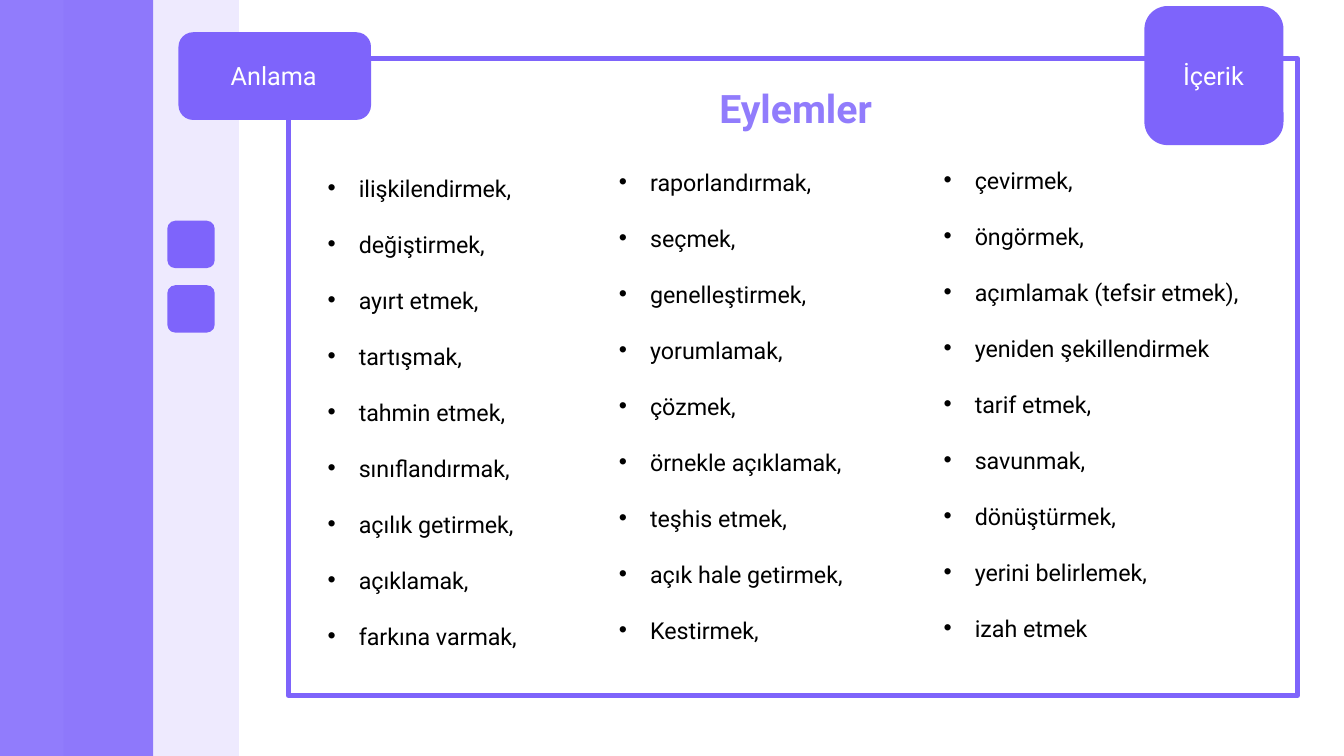
import pptx
import pptx.util
import pptx.dml.color
import pptx.enum.shapes
import pptx.enum.text
import pptx.oxml.ns
from lxml import etree

Inches, Pt = pptx.util.Inches, pptx.util.Pt
SHAPE = pptx.enum.shapes.MSO_SHAPE
ALIGN = pptx.enum.text.PP_ALIGN
qn = pptx.oxml.ns.qn

COLORS = {"violet": "7E64FB", "lilac": "917CFC", "white": "FFFFFF", "black": "000000"}
FONT = "Roboto"
INDENT = 0.31

TITLE = ("Eylemler", (3.83, 0.84, 8.12, 0.92))
BADGES = [
    ("İçerik", (11.35, 0.06, 1.38, 1.38), 11.04),
    ("Anlama", (1.77, 0.32, 1.91, 0.87), 1.72),
]
VERB_COLUMNS = [
    ((3.15, 1.76, 2.89, 4.86), [
        "ilişkilendirmek,", "değiştirmek,", "ayırt etmek,", "tartışmak,", "tahmin etmek,",
        "sınıflandırmak,", "açılık getirmek,", "açıklamak,", "farkına varmak,"]),
    ((6.04, 1.7, 3.53, 4.86), [
        "raporlandırmak,", "seçmek,", "genelleştirmek,", "yorumlamak,", "çözmek,",
        "örnekle açıklamak,", "teşhis etmek,", "açık hale getirmek,", "Kestirmek,"]),
    ((9.26, 1.68, 3.36, 4.99), [
        "çevirmek,", "öngörmek,", "açımlamak (tefsir etmek),", "yeniden şekillendirmek",
        "tarif etmek,", "savunmak,", "dönüştürmek,", "yerini belirlemek,", "izah etmek"]),
]
SIDE_BUTTON_TOPS = [2.19, 2.83]


def rgb(name):
    return pptx.dml.color.RGBColor.from_string(COLORS[name])


def add_block(s, kind, box, color, alpha=None, border=None):
    sp = s.shapes.add_shape(kind, *map(Inches, box))
    sp.shadow.inherit = False
    sp.fill.solid()
    sp.fill.fore_color.rgb = rgb(color)
    if alpha is not None:
        clr = sp._element.spPr.find(qn("a:solidFill"))[0]
        etree.SubElement(clr, qn("a:alpha")).set("val", str(alpha * 1000))
    if border:
        sp.line.color.rgb = rgb(border)
        sp.line.width = Pt(3.5)
    else:
        sp.line.fill.background()


def add_text(s, box, lines, size, color, bold=False, spacing=0.9, bullets=False):
    tf = s.shapes.add_textbox(*map(Inches, box)).text_frame
    tf.word_wrap = True
    tf.text = "\n".join(lines)
    for p in tf.paragraphs:
        p.alignment = ALIGN.LEFT if bullets else ALIGN.CENTER
        p.line_spacing = spacing
        font = p.runs[0].font
        font.name, font.size, font.bold = FONT, Pt(size), bold
        font.color.rgb = rgb(color)
        if bullets:
            add_bullet(p)


def add_bullet(p):
    p.space_before, p.space_after = Pt(10), Pt(16)
    pPr = p._p.get_or_add_pPr()
    pPr.set("marL", str(Inches(INDENT)))
    pPr.set("indent", str(-Inches(INDENT)))
    etree.SubElement(pPr, qn("a:buFont")).set("typeface", "Arial")
    etree.SubElement(pPr, qn("a:buChar")).set("char", "•")


def main():
    prs = pptx.Presentation()
    prs.slide_width, prs.slide_height = Inches(13.33), Inches(7.5)
    s = prs.slides.add_slide(prs.slide_layouts[6])

    add_block(s, SHAPE.RECTANGLE, (0, 0, 1.52, 7.5), "lilac")
    add_block(s, SHAPE.RECTANGLE, (0.63, 0, 1.74, 7.5), "violet", alpha=13)
    add_block(s, SHAPE.RECTANGLE, (2.86, 0.58, 10.01, 6.32), "white", alpha=89, border="violet")

    title, title_box = TITLE
    add_text(s, title_box, [title], 28, "lilac", bold=True)
    for box, verbs in VERB_COLUMNS:
        add_text(s, box, verbs, 16.6, "black", spacing=0.7, bullets=True)
    for label, box, label_left in BADGES:
        add_block(s, SHAPE.ROUNDED_RECTANGLE, box, "violet")
        add_text(s, (label_left, 0.58, 1.99, 0.36), [label], 18, "white")
    for top in SIDE_BUTTON_TOPS:
        add_block(s, SHAPE.ROUNDED_RECTANGLE, (1.66, top, 0.47, 0.47), "violet")

    prs.save("out.pptx")


if __name__ == "__main__":
    main()
